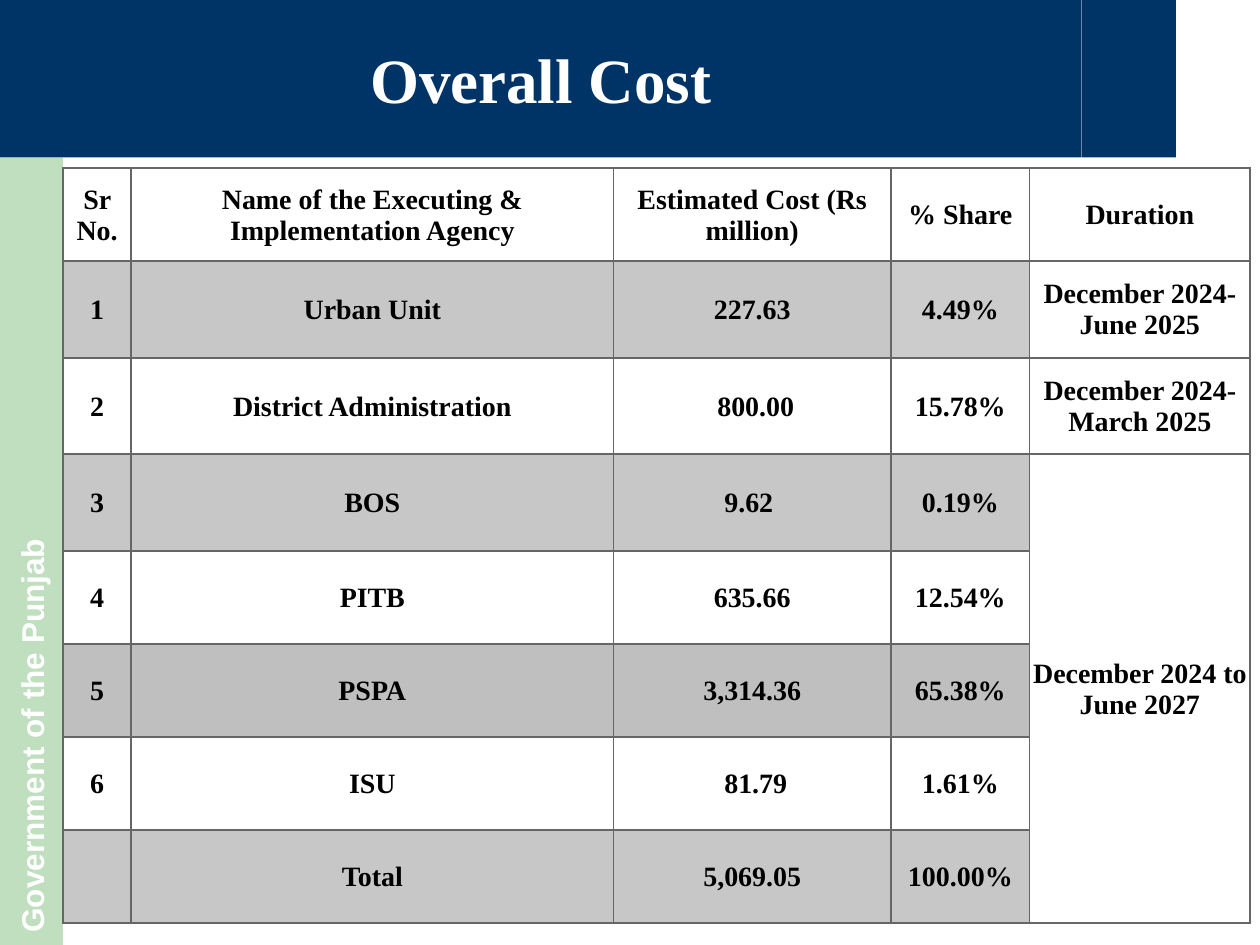
"""Build the Overall Cost slide with its banner, side band and cost table."""
from lxml.etree import SubElement
from pptx import Presentation
from pptx.dml.color import RGBColor
from pptx.enum.shapes import MSO_SHAPE
from pptx.enum.text import MSO_ANCHOR, MSO_AUTO_SIZE, PP_ALIGN
from pptx.oxml.ns import qn
from pptx.util import Pt

NAVY = RGBColor(0x00, 0x33, 0x66)
GREEN = RGBColor(0x00, 0x80, 0x00)
WHITE = RGBColor(0xFF, 0xFF, 0xFF)
BLACK = RGBColor(0x00, 0x00, 0x00)
BORDER = RGBColor(0x66, 0x66, 0x66)
GRAY = RGBColor(0xC7, 0xC7, 0xC7)
LIGHT_GRAY = RGBColor(0xCC, 0xCC, 0xCC)
DARK_GRAY = RGBColor(0xBF, 0xBF, 0xBF)

COLUMN_WIDTHS = [39, 275.6, 158.6, 79.2, 126]
ROW_HEIGHTS = [53.2] + [55.2] * 3 + [53.2] * 4
ROW_FILLS = [None, GRAY, None, GRAY, None, DARK_GRAY, None, GRAY]
CELL_FILLS = {(1, 3): LIGHT_GRAY}
THICK_RULES = {1, 2, 3}
DURATION_COLUMN = 4
MERGED_ROWS = (3, 7)
COSTS = [
    ["Sr No.", "Name of the Executing & Implementation Agency",
     "Estimated Cost (Rs million)", "% Share", "Duration"],
    ["1", "Urban Unit", "227.63", "4.49%", "December 2024-June 2025"],
    ["2", "District Administration", " 800.00", "15.78%", "December 2024-March 2025"],
    ["3", "BOS", "9.62 ", "0.19%", "December 2024 to June 2027"],
    ["4", "PITB", " 635.66 ", "12.54%", ""],
    ["5", "PSPA", "3,314.36", "65.38%", ""],
    ["6", "ISU", " 81.79", "1.61%", ""],
    ["", "Total", "5,069.05", "100.00%", ""],
]


class SlideBuilder:
    """Hold the text styles and the slide being built."""

    title_font = {"name": "Times New Roman", "size": Pt(36), "bold": True}
    band_font = {"name": "Arial", "size": Pt(18), "bold": True}
    cell_font = {"name": "Times New Roman", "size": Pt(16), "bold": True}
    cell_format = {
        "vertical_anchor": MSO_ANCHOR.MIDDLE,
        "margin_left": Pt(0.72),
        "margin_right": Pt(0.72),
        "margin_top": Pt(0.72),
        "margin_bottom": 0,
    }

    def __init__(self, presentation):
        """Add a title-only slide to the presentation."""
        self.slide = presentation.slides.add_slide(presentation.slide_layouts[5])

    def apply(self, target, values):
        """Set each attribute named in values on the target."""
        for name, value in values.items():
            setattr(target, name, value)

    def set_text(self, text_frame, text, font, color, alignment=PP_ALIGN.CENTER):
        """Put one styled paragraph in the text frame."""
        paragraph = text_frame.paragraphs[0]
        paragraph.text = text
        paragraph.alignment = alignment
        self.apply(paragraph.font, font)
        paragraph.font.color.rgb = color

    def title(self, text, left, top, width, height):
        """Format the title placeholder as a navy banner."""
        shape = self.slide.shapes.title
        self.apply(shape, {"left": Pt(left), "top": Pt(top),
                           "width": Pt(width), "height": Pt(height)})
        shape.fill.solid()
        shape.fill.fore_color.rgb = NAVY
        self.apply(shape.text_frame, {"word_wrap": True,
                                      "auto_size": MSO_AUTO_SIZE.NONE,
                                      "vertical_anchor": MSO_ANCHOR.MIDDLE})
        self.set_text(shape.text_frame, text, self.title_font, WHITE)

    def rectangle(self, color, left, top, width, height):
        """Add a plain filled rectangle."""
        shape = self.slide.shapes.add_shape(
            MSO_SHAPE.RECTANGLE, Pt(left), Pt(top), Pt(width), Pt(height))
        shape.shadow.inherit = False
        shape.fill.solid()
        shape.fill.fore_color.rgb = color
        shape.line.fill.background()
        return shape

    def side_band(self, text, left, top, width, height):
        """Add a translucent band with text that reads upwards."""
        shape = self.rectangle(GREEN, left, top, width, height)
        fill = shape.element.spPr.find(qn("a:solidFill"))
        SubElement(fill[0], qn("a:alpha"), val="25000")
        self.apply(shape.text_frame, {"word_wrap": True,
                                      "vertical_anchor": MSO_ANCHOR.MIDDLE})
        shape.element.txBody.find(qn("a:bodyPr")).set("vert", "vert270")
        self.set_text(shape.text_frame, text, self.band_font, WHITE, PP_ALIGN.LEFT)

    def borders(self, cell, row):
        """Draw the four borders of a cell."""
        top, bottom = (1.5 if rule in THICK_RULES else 1 for rule in (row, row + 1))
        properties = cell._tc.get_or_add_tcPr()
        for side, weight in {"L": 1, "R": 1, "T": top, "B": bottom}.items():
            line = SubElement(properties, qn(f"a:ln{side}"), w=str(int(Pt(weight))))
            fill = SubElement(line, qn("a:solidFill"))
            SubElement(fill, qn("a:srgbClr"), val=str(BORDER))

    def cell(self, cell, text, row, color):
        """Format one table cell."""
        self.apply(cell, self.cell_format)
        self.borders(cell, row)
        if color is None:
            cell.fill.background()
        else:
            cell.fill.solid()
            cell.fill.fore_color.rgb = color
        self.set_text(cell.text_frame, text, self.cell_font, BLACK)

    def table(self, rows, left, top):
        """Add the cost table with its merged duration cell."""
        frame = self.slide.shapes.add_table(
            len(rows), len(COLUMN_WIDTHS), Pt(left), Pt(top),
            Pt(sum(COLUMN_WIDTHS)), Pt(sum(ROW_HEIGHTS)))
        table = frame.table
        self.apply(table, {"first_row": False, "horz_banding": False})
        for column, width in zip(table.columns, COLUMN_WIDTHS):
            column.width = Pt(width)
        for table_row, height in zip(table.rows, ROW_HEIGHTS):
            table_row.height = Pt(height)
        first, last = (table.cell(row, DURATION_COLUMN) for row in MERGED_ROWS)
        first.merge(last)
        for row, texts in enumerate(rows):
            for column, text in enumerate(texts):
                color = None if column == DURATION_COLUMN else ROW_FILLS[row]
                color = CELL_FILLS.get((row, column), color)
                self.cell(table.cell(row, column), text, row, color)


def main():
    """Build and save the presentation."""
    presentation = Presentation()
    presentation.slide_width, presentation.slide_height = Pt(720), Pt(540)
    builder = SlideBuilder(presentation)
    builder.rectangle(NAVY, 618, 0, 54, 90)
    builder.side_band("Government of the Punjab", 0, 90, 36, 450)
    builder.title("Overall Cost", 0, 0, 618, 90)
    builder.table(COSTS, 36, 96)
    presentation.save("out.pptx")


if __name__ == "__main__":
    main()
